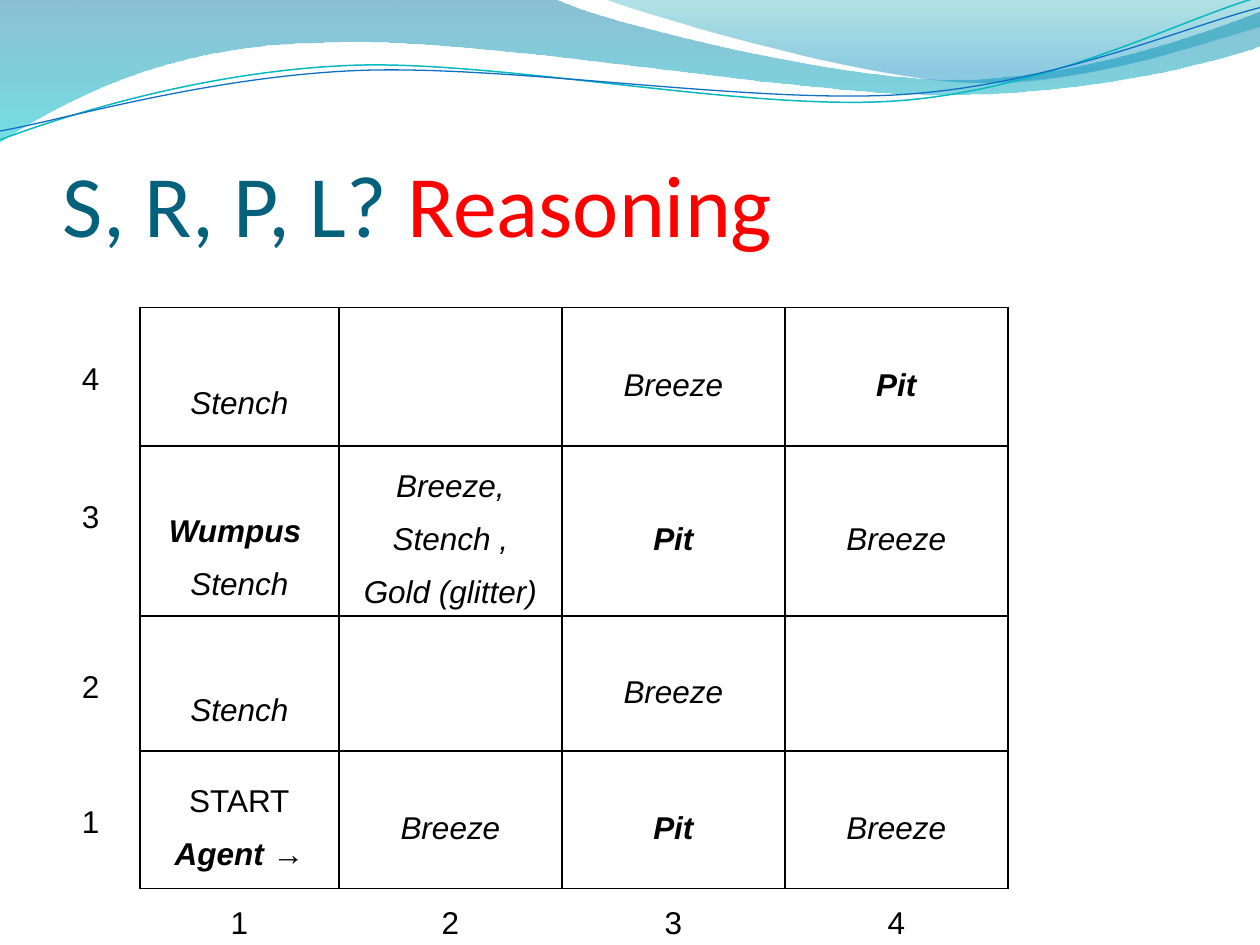
"""Build the slide with a labelled grid world under a wave banner."""
import dataclasses
import math
import typing

import lxml.etree
import pptx
import pptx.dml.color
import pptx.enum.text
import pptx.oxml.ns
import pptx.util

Inches = pptx.util.Inches
Pt = pptx.util.Pt
Point = tuple[float, float]
BLACK = "000000"
NO_STYLE = "{2D5ABB26-0587-4C30-8999-92F81FD0307C}"
COLUMN_WIDTHS = (0.78, 1.58, 1.77, 1.77, 1.77)
ROW_HEIGHTS = (1.1, 1.31, 1.07, 1.09, 0.44)
TABLE_HEIGHT = 5.06
LOWERED = 0.29


@dataclasses.dataclass
class Stop:
    position: float
    color: str
    opacity: int


@dataclasses.dataclass
class Wave:
    bounds: tuple[float, float, float, float]
    start: Point
    segments: list[tuple[Point, ...]]
    stops: tuple[Stop, ...] = ()
    line_color: str = ""
    line_width: float = 0
    rotation: float = 0


@dataclasses.dataclass
class Line:
    text: str
    bold: bool = False
    italic: bool = True


@dataclasses.dataclass
class Square:
    lines: tuple[Line, ...] = ()
    top: float = 0
    middle: bool = True
    sides: str = "LRTB"


WAVES = [
    Wave((-0.01, -0.01, 10.02, 1.14), (0, -0.01), [
        ((4.4, -0.01),),
        ((4.76, 0.17), (6.64, 0.63), (7.58, 0.63)),
        ((8.53, 0.63), (9.58, 0.26), (10, 0.09)),
        ((10.01, 0.36),),
        ((9.83, 0.44), (8.7, 0.76), (7.46, 0.75)),
        ((6.22, 0.75), (3.82, 0.28), (2.57, 0.34)),
        ((1.29, 0.35), (0.46, 0.83), (-0.01, 1.13)),
        ((0, -0.01),),
    ], (Stop(0, "0074A1", 45), Stop(1, "00C6CF", 55))),
    Wave((4.79, -0.01, 5.21, 0.7), (4.79, -0.01), [
        ((5.09, 0.11), (6.82, 0.62), (7.69, 0.65)),
        ((8.56, 0.69), (9.61, 0.32), (10, 0.21)),
        ((10, 0),),
        ((4.79, -0.01),),
    ], (Stop(0, "00A1A9", 30), Stop(0.8, "008BBF", 45))),
    Wave((-0.02, 0.22, 10.02, 0.71), (0, 1.11), [
        ((0.48, 0.93), (1.58, 0.57), (2.77, 0.52)),
        ((3.95, 0.47), (5.93, 0.89), (7.13, 0.8)),
        ((8.33, 0.71), (9.38, 0.15), (9.98, -0.02)),
    ], line_color="0AB8BF", line_width=0.85, rotation=357.3),
    Wave((-0.02, 0.3, 10.03, 0.58), (0, 1.04), [
        ((0.47, 0.96), (1.64, 0.61), (2.83, 0.56)),
        ((4.03, 0.51), (5.97, 0.83), (7.17, 0.75)),
        ((8.36, 0.67), (9.41, 0.21), (10, 0.06)),
    ], line_color="0F6FC6", line_width=0.75, rotation=357.3),
]

EMPTY = Square()
BREEZE = Square((Line("Breeze"),))
PIT = Square((Line("Pit", bold=True),))
STENCH = Square((Line("Stench"),), top=LOWERED)
WUMPUS = Square((Line("Wumpus ", bold=True), Line("Stench")), top=LOWERED)
GOLD = Square((Line("Breeze,"), Line("Stench ,"), Line("Gold (glitter)")))
START = Square((Line("START", italic=False), Line("Agent →", bold=True)))
WORLD = [
    [STENCH, EMPTY, BREEZE, PIT],
    [WUMPUS, GOLD, PIT, BREEZE],
    [STENCH, EMPTY, BREEZE, EMPTY],
    [START, BREEZE, PIT, BREEZE],
]


def rgb(color: str) -> pptx.dml.color.RGBColor:
    return pptx.dml.color.RGBColor.from_string(color)


def assign(target: typing.Any, values: dict[str, typing.Any]) -> None:
    for name, value in values.items():
        setattr(target, name, value)


def add_xml(parent: typing.Any, tag: str, **attributes: str) -> typing.Any:
    return lxml.etree.SubElement(parent, pptx.oxml.ns.qn(tag), attributes)


def to_local(wave: Wave, point: Point) -> Point:
    left, top, width, height = wave.bounds
    angle = math.radians(-wave.rotation)
    x, y = point[0] - left - width / 2, point[1] - top - height / 2
    return (x * math.cos(angle) - y * math.sin(angle) + width / 2,
            x * math.sin(angle) + y * math.cos(angle) + height / 2)


def add_curves(outline: typing.Any, wave: Wave) -> None:
    for child in list(outline):
        outline.remove(child)
    for name, length in zip("wh", wave.bounds[2:]):
        outline.set(name, str(Inches(length)))
    tags = {1: "a:lnTo", 3: "a:cubicBezTo"}
    steps = [("a:moveTo", (wave.start,))]
    steps += [(tags[len(segment)], segment) for segment in wave.segments]
    for tag, points in steps:
        step = add_xml(outline, tag)
        for point in points:
            x, y = to_local(wave, point)
            add_xml(step, "a:pt", x=str(Inches(x)), y=str(Inches(y)))
    if wave.stops:
        add_xml(outline, "a:close")


def draw_wave(page: typing.Any, wave: Wave) -> None:
    builder = page.shapes.build_freeform(*map(Inches, wave.start))
    ends = [segment[-1] for segment in wave.segments]
    builder.add_line_segments([(Inches(x), Inches(y)) for x, y in ends], close=False)
    shape = builder.convert_to_shape()
    add_curves(shape.element.xpath(".//a:path")[0], wave)
    assign(shape, dict(zip(("left", "top", "width", "height"), map(Inches, wave.bounds))))
    shape.rotation = wave.rotation
    shape.shadow.inherit = False
    if not wave.stops:
        shape.fill.background()
        shape.line.color.rgb = rgb(wave.line_color)
        shape.line.width = Pt(wave.line_width)
        return
    shape.line.fill.background()
    shape.fill.gradient()
    shape.fill.gradient_angle = 270
    for target, stop in zip(shape.fill.gradient_stops, wave.stops):
        target.color.rgb = rgb(stop.color)
        target.position = stop.position
    for color, stop in zip(shape.element.xpath(".//a:gs/a:srgbClr"), wave.stops):
        add_xml(color, "a:alpha", val=str(stop.opacity * 1000))


def write_span(para: typing.Any, text: str, color: str, values: dict[str, typing.Any]) -> None:
    span = para.add_run()
    span.text = text
    assign(span.font, values)
    span.font.color.rgb = rgb(color)


def draw_title(page: typing.Any) -> None:
    box = page.shapes.add_textbox(Inches(0.5), Inches(0.77), Inches(9), Inches(1.25))
    assign(box.text_frame, {
        "word_wrap": True, "vertical_anchor": pptx.enum.text.MSO_ANCHOR.BOTTOM,
        "margin_left": 0, "margin_right": 0, "margin_top": Inches(0.05), "margin_bottom": 0,
    })
    for text, color in (("S, R, P, L? ", "04617B"), ("Reasoning", "FF0000")):
        write_span(box.text_frame.paragraphs[0], text, color, {"name": "Calibri", "size": Pt(50)})


def fill_cell(cell: typing.Any, square: Square) -> None:
    anchors = pptx.enum.text.MSO_ANCHOR
    assign(cell, {
        "margin_left": Inches(0.07), "margin_right": Inches(0.07),
        "margin_top": Inches(square.top), "margin_bottom": 0,
        "vertical_anchor": anchors.MIDDLE if square.middle else anchors.TOP,
    })
    for side in square.sides:
        border = add_xml(cell._tc.get_or_add_tcPr(), f"a:ln{side}", w=str(Pt(1)))
        add_xml(add_xml(border, "a:solidFill"), "a:srgbClr", val=BLACK)
    cell.fill.background()
    for index, line in enumerate(square.lines):
        frame = cell.text_frame
        para = frame.add_paragraph() if index else frame.paragraphs[0]
        assign(para, {"alignment": pptx.enum.text.PP_ALIGN.CENTER, "line_spacing": 1.5})
        write_span(para, line.text, BLACK, {
            "name": "Arial", "size": Pt(18), "bold": line.bold, "italic": line.italic})


def label(number: int, top: float, sides: str) -> Square:
    return Square((Line(str(number), italic=False),), top, False, sides)


def draw_world(page: typing.Any) -> None:
    rows = [[label(4 - index, LOWERED, "R"), *row] for index, row in enumerate(WORLD)]
    rows.append([Square(sides=""), *(label(number, 0, "T") for number in range(1, 5))])
    frame = page.shapes.add_table(
        len(rows), len(COLUMN_WIDTHS), Inches(0.33), Inches(2.44),
        Inches(sum(COLUMN_WIDTHS)), Inches(TABLE_HEIGHT))
    table = frame.table
    assign(table, {"first_row": False, "horz_banding": False})
    table._tbl.xpath("./a:tblPr/a:tableStyleId")[0].text = NO_STYLE
    for column, width in zip(table.columns, COLUMN_WIDTHS):
        column.width = Inches(width)
    for row, height, squares in zip(table.rows, ROW_HEIGHTS, rows):
        row.height = Inches(height)
        for cell, square in zip(row.cells, squares):
            fill_cell(cell, square)
    frame.height = Inches(TABLE_HEIGHT)


def main() -> None:
    deck = pptx.Presentation()
    assign(deck, {"slide_width": Inches(10), "slide_height": Inches(7.5)})
    page = deck.slides.add_slide(deck.slide_layouts[6])
    for wave in WAVES:
        draw_wave(page, wave)
    draw_title(page)
    draw_world(page)
    deck.save("out.pptx")


if __name__ == "__main__":
    main()
